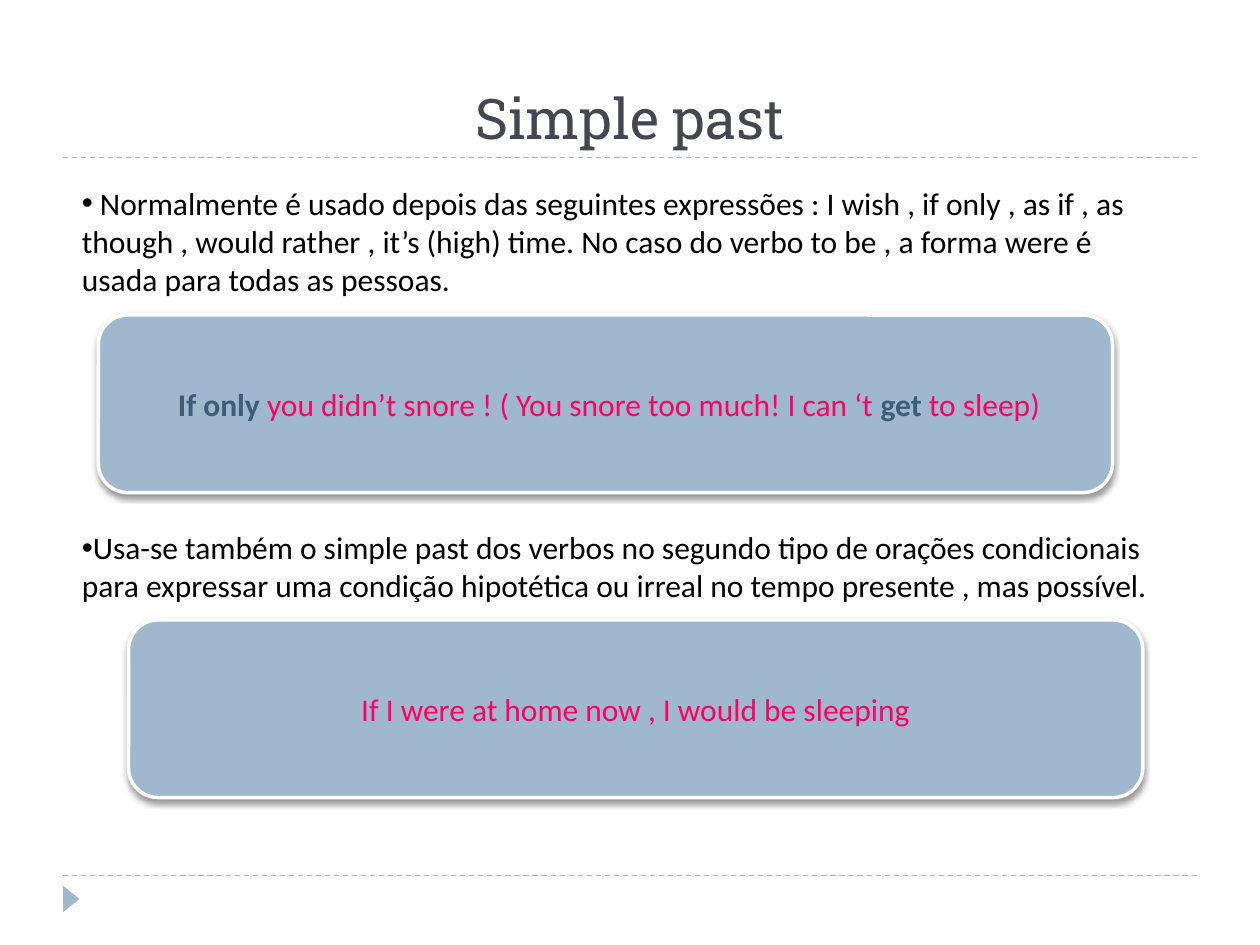
from typing import NamedTuple

import pptx
import pptx.dml.color
import pptx.enum.dml
import pptx.enum.shapes
import pptx.enum.text
import pptx.oxml
import pptx.oxml.ns
import pptx.util

Inches, Pt = pptx.util.Inches, pptx.util.Pt
MSO_SHAPE = pptx.enum.shapes.MSO_SHAPE
PP_ALIGN = pptx.enum.text.PP_ALIGN
MSO_ANCHOR = pptx.enum.text.MSO_ANCHOR

COLORS = {
    "panel": "9FB8CD",
    "title": "464653",
    "text": "000000",
    "white": "FFFFFF",
    "keyword": "3E5D78",
    "example": "FF0066",
}
NS = pptx.oxml.ns.nsdecls("a")
SHADOW = (
    f'<a:effectLst {NS}><a:outerShdw blurRad="{Pt(3)}" dist="{Pt(2)}" dir="5400000" '
    'rotWithShape="0"><a:srgbClr val="000000"><a:alpha val="40000"/></a:srgbClr>'
    "</a:outerShdw></a:effectLst>"
)


class Run(NamedTuple):
    text: str
    color: str
    bold: bool = False


class Example(NamedTuple):
    left: float
    top: float
    runs: list[Run]


RULE_TOPS = [1.25, 6.95]
EXAMPLE_SIZE = Inches(8.05), Inches(1.41)
EXAMPLES = [
    Example(0.78, 2.5, [
        Run(" ", "white"),
        Run("If only ", "keyword", True),
        Run("you didn’t snore ! ( You snore too much! I can ‘t ", "example"),
        Run("get", "keyword", True),
        Run(" to sleep)", "example"),
    ]),
    Example(1.02, 4.92, [Run("If I were at home now , I would be sleeping", "example")]),
]
USES = [
    " Normalmente é usado depois das seguintes expressões : I wish , if only , as if , "
    "as though , would rather , it’s (high) time. No caso do verbo to be , a forma were é "
    "usada para todas as pessoas.",
    "Usa-se também o simple past dos verbos no segundo tipo de orações condicionais "
    "para expressar uma condição hipotética ou irreal no tempo presente , mas possível.",
]
EXAMPLE_GAP = Pt(132)  # room for the example between the two uses


def rgb(name: str) -> pptx.dml.color.RGBColor:
    return pptx.dml.color.RGBColor.from_string(COLORS[name])


def place(s, left: float, top: float, width: float, height: float) -> None:
    s.left, s.top, s.width, s.height = map(Inches, (left, top, width, height))


def add_run(p, run: Run, size: int = 18, font: str = "Calibri") -> None:
    r = p.add_run()
    r.text = run.text
    r.font.name, r.font.size, r.font.bold = font, Pt(size), run.bold
    r.font.color.rgb = rgb(run.color)


def add_rule(shapes, top: float) -> None:
    s = shapes.add_connector(
        pptx.enum.shapes.MSO_CONNECTOR.STRAIGHT,
        Inches(0.5), Inches(top), Inches(9.5), Inches(top),
    )
    s.line.color.rgb = rgb("panel")
    s.line.width = Pt(0.75)
    s.line.dash_style = pptx.enum.dml.MSO_LINE.DASH
    s._element.spPr.append(pptx.oxml.parse_xml(f"<a:effectLst {NS}/>"))


def add_marker(shapes) -> None:
    """Draw the small triangle under the footer rule."""
    s = shapes.add_shape(
        MSO_SHAPE.ISOSCELES_TRIANGLE, Inches(0.46), Inches(7.07), Inches(0.21), Inches(0.13)
    )
    s.rotation = 90
    s.shadow.inherit = False
    s.fill.solid()
    s.fill.fore_color.rgb = rgb("panel")
    s.line.fill.background()


def fill_title(s) -> None:
    place(s, 0.5, 0.25, 9, 1)
    tf = s.text_frame
    tf.vertical_anchor = MSO_ANCHOR.BOTTOM
    p = tf.paragraphs[0]
    p.alignment = PP_ALIGN.CENTER
    add_run(p, Run("Simple past", "title"), 32, "Roboto Slab")


def fill_uses(s) -> None:
    place(s, 0.55, 1.41, 8.83, 3.43)
    tf = s.text_frame
    tf.word_wrap = True
    tf.auto_size = pptx.enum.text.MSO_AUTO_SIZE.NONE
    tf.vertical_anchor = MSO_ANCHOR.TOP
    for i, text in enumerate(USES):
        p = tf.add_paragraph() if i else tf.paragraphs[0]
        pPr = p._p.get_or_add_pPr()
        pPr.set("marL", "0")
        pPr.set("indent", "0")
        pPr.append(pptx.oxml.parse_xml(f'<a:buFont {NS} typeface="Arial"/>'))
        pPr.append(pptx.oxml.parse_xml(f'<a:buChar {NS} char="•"/>'))
        p.space_before = EXAMPLE_GAP if i else Pt(0)
        add_run(p, Run(text, "text"))


def add_example(shapes, example: Example) -> None:
    s = shapes.add_shape(
        MSO_SHAPE.ROUNDED_RECTANGLE, Inches(example.left), Inches(example.top), *EXAMPLE_SIZE
    )
    s.fill.solid()
    s.fill.fore_color.rgb = rgb("panel")
    s.line.color.rgb = rgb("white")
    s.line.width = Pt(2)
    s._element.spPr.append(pptx.oxml.parse_xml(SHADOW))
    tf = s.text_frame
    tf.word_wrap = True
    tf.vertical_anchor = MSO_ANCHOR.MIDDLE
    p = tf.paragraphs[0]
    p.alignment = PP_ALIGN.CENTER
    for run in example.runs:
        add_run(p, run)


def main() -> None:
    prs = pptx.Presentation()
    prs.slide_width, prs.slide_height = Inches(10), Inches(7.5)
    slide = prs.slides.add_slide(prs.slide_layouts[1])
    fill_title(slide.shapes.title)
    fill_uses(slide.placeholders[1])
    for top in RULE_TOPS:
        add_rule(slide.shapes, top)
    add_marker(slide.shapes)
    for example in EXAMPLES:
        add_example(slide.shapes, example)
    prs.save("out.pptx")


if __name__ == "__main__":
    main()
